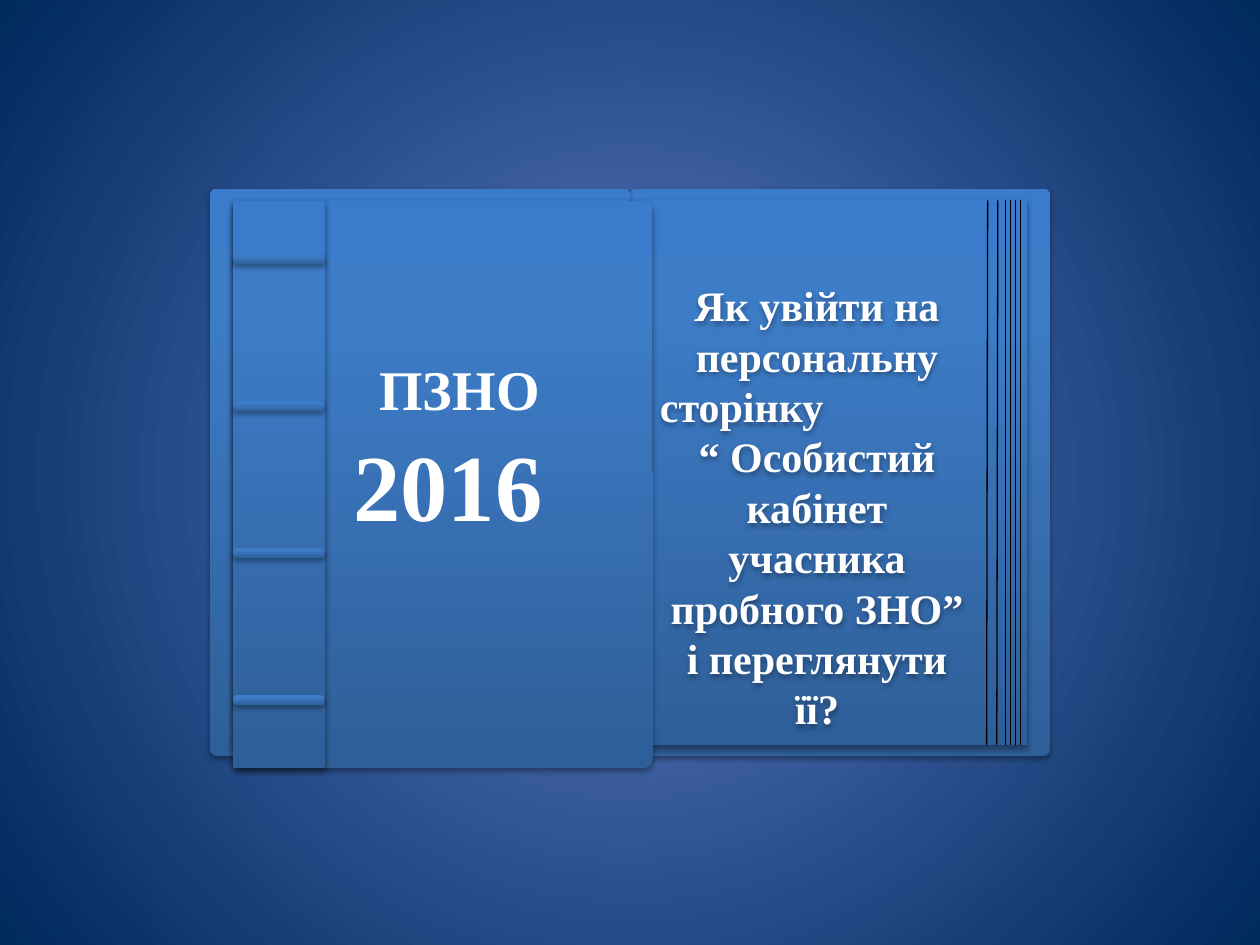
"""Build an open-book cover slide for the 2016 trial exam."""
from lxml.etree import SubElement
from pptx import Presentation
from pptx.dml.color import RGBColor
from pptx.enum.shapes import MSO_CONNECTOR, MSO_SHAPE as Preset
from pptx.enum.text import MSO_ANCHOR, MSO_AUTO_SIZE, PP_ALIGN as Align
from pptx.oxml.ns import qn
from pptx.util import Pt

WHITE = RGBColor(0xFF, 0xFF, 0xFF)
BLACK = RGBColor(0x00, 0x00, 0x00)
DEEP = RGBColor(0x2F, 0x5F, 0x99)
MID = RGBColor(0x3D, 0x7C, 0xC7)
LIGHT = RGBColor(0x3A, 0x7C, 0xCB)
GLOW = RGBColor(0x5E, 0x7C, 0xC5)
NIGHT = RGBColor(0x00, 0x29, 0x5C)
FONT = "Times New Roman"


def write(paragraph, text, size=24, spacing=28.8, align=Align.CENTER):
    """Fill a paragraph with formatted text."""
    paragraph.text = text
    paragraph.alignment = align
    paragraph.line_spacing = Pt(spacing)
    paragraph.space_before = Pt(0)
    font = paragraph.font
    font.name, font.size, font.bold = FONT, Pt(size), True
    font.color.rgb = WHITE


def swap_gradient(properties, stops):
    """Replace a solid fill with an empty-ended gradient and return it."""
    solid = properties.find(qn("a:solidFill"))
    gradient = solid.makeelement(qn("a:gradFill"), {"rotWithShape": "1"})
    stop_list = SubElement(gradient, qn("a:gsLst"))
    for percent, color in stops:
        stop = SubElement(stop_list, qn("a:gs"), pos=str(percent * 1000))
        SubElement(stop, qn("a:srgbClr"), val=str(color))
    properties.replace(solid, gradient)
    return gradient


def cast_shadow(properties):
    """Give shape properties a soft shadow below."""
    effects = properties.find(qn("a:effectLst"))
    shadow = SubElement(effects, qn("a:outerShdw"), blurRad=str(Pt(3.1)), dist=str(Pt(1.8)),
                        dir="5400000", rotWithShape="0")
    color = SubElement(shadow, qn("a:srgbClr"), val=str(BLACK))
    SubElement(color, qn("a:alpha"), val="35000")


class Book:
    """Draw the parts of a book on one slide."""

    def __init__(self, slide):
        self.slide = slide

    def backdrop(self):
        """Paint the radial background."""
        self.slide.background.fill.solid()
        properties = self.slide.element.find(".//" + qn("p:bgPr"))
        gradient = swap_gradient(properties, [(0, GLOW), (100, NIGHT)])
        circle = SubElement(gradient, qn("a:path"), {"path": "circle"})
        SubElement(circle, qn("a:fillToRect"), l="50000", t="50000", r="50000", b="50000")

    def panel(self, left, top, width, height, corner=0):
        """Add a shaded panel, rounded when a corner is given."""
        preset = Preset.ROUNDED_RECTANGLE if corner else Preset.RECTANGLE
        shape = self.slide.shapes.add_shape(preset, Pt(left), Pt(top), Pt(width), Pt(height))
        if corner:
            shape.adjustments[0] = corner
        shape.line.fill.background()
        shape.fill.solid()
        shape.shadow.inherit = False
        properties = shape.element.spPr
        gradient = swap_gradient(properties, [(0, DEEP), (80, MID), (100, LIGHT)])
        SubElement(gradient, qn("a:lin"), ang="16200000", scaled="0")
        cast_shadow(properties)

    def page_edge(self, top_x, bottom_x, top, bottom):
        """Add a thin line along the page side."""
        edge = self.slide.shapes.add_connector(
            MSO_CONNECTOR.STRAIGHT, Pt(top_x), Pt(top), Pt(bottom_x), Pt(bottom))
        edge.line.color.rgb = BLACK
        edge.line.width = Pt(0.75)
        SubElement(edge.element.spPr, qn("a:effectLst"))

    def question(self, lines, left, top, width, height):
        """Add the shadowed text of the right page."""
        box = self.slide.shapes.add_textbox(Pt(left), Pt(top), Pt(width), Pt(height))
        box.fill.background()
        box.shadow.inherit = False
        cast_shadow(box.element.spPr)
        frame = box.text_frame
        frame.word_wrap = True
        frame.margin_top = Pt(37.4)
        for index, (text, align) in enumerate(lines):
            paragraph = frame.add_paragraph() if index else frame.paragraphs[0]
            write(paragraph, text, align=align)

    def title(self, lines, left, top, width, height):
        """Place the title in front of the cover."""
        title = self.slide.shapes.title
        title.left, title.top, title.width, title.height = map(Pt, (left, top, width, height))
        self.slide.shapes.element.append(title.element)
        frame = title.text_frame
        frame.word_wrap = True
        frame.auto_size = MSO_AUTO_SIZE.NONE
        frame.vertical_anchor = MSO_ANCHOR.MIDDLE
        frame.margin_top = frame.margin_bottom = 0
        for index, (text, size, spacing) in enumerate(lines):
            paragraph = frame.add_paragraph() if index else frame.paragraphs[0]
            write(paragraph, text, size=size, spacing=spacing)


def main():
    """Compose and save the slide."""
    deck = Presentation()
    deck.slide_width, deck.slide_height = Pt(720), Pt(540)
    book = Book(deck.slides.add_slide(deck.slide_layouts[5]))
    book.backdrop()

    book.panel(360, 108, 240, 324, corner=0.016)
    book.panel(360, 114, 227, 312)
    book.question([
        ("Як увійти на персональну", Align.CENTER),
        ("сторінку", Align.LEFT),
        ("“ Особистий кабінет учасника пробного ЗНО” і переглянути її?", Align.CENTER),
    ], 370, 122.4, 193.7, 303)
    for top_x, lean in ((564.4, 0.6), (570.2, 0.6), (574.5, 0), (577.4, 0), (580.3, 0), (583.2, 0)):
        book.page_edge(top_x, top_x - lean, 114.5, 425.5)

    book.panel(120, 108, 240, 324, corner=0.016)
    book.panel(133, 114, 227, 312)
    book.panel(133, 115, 240, 324, corner=0.022)
    book.panel(133, 115, 52.6, 324, corner=0.022)
    for band in range(4):
        book.panel(133, 145.4 + 84 * band, 52.6, 5.6, corner=0.5)
    book.title([("ПЗНО", 32, 47.3), ("2016 ", 54, 67.5)], 155, 198, 215.3, 106.6)

    deck.save("out.pptx")


if __name__ == "__main__":
    main()
